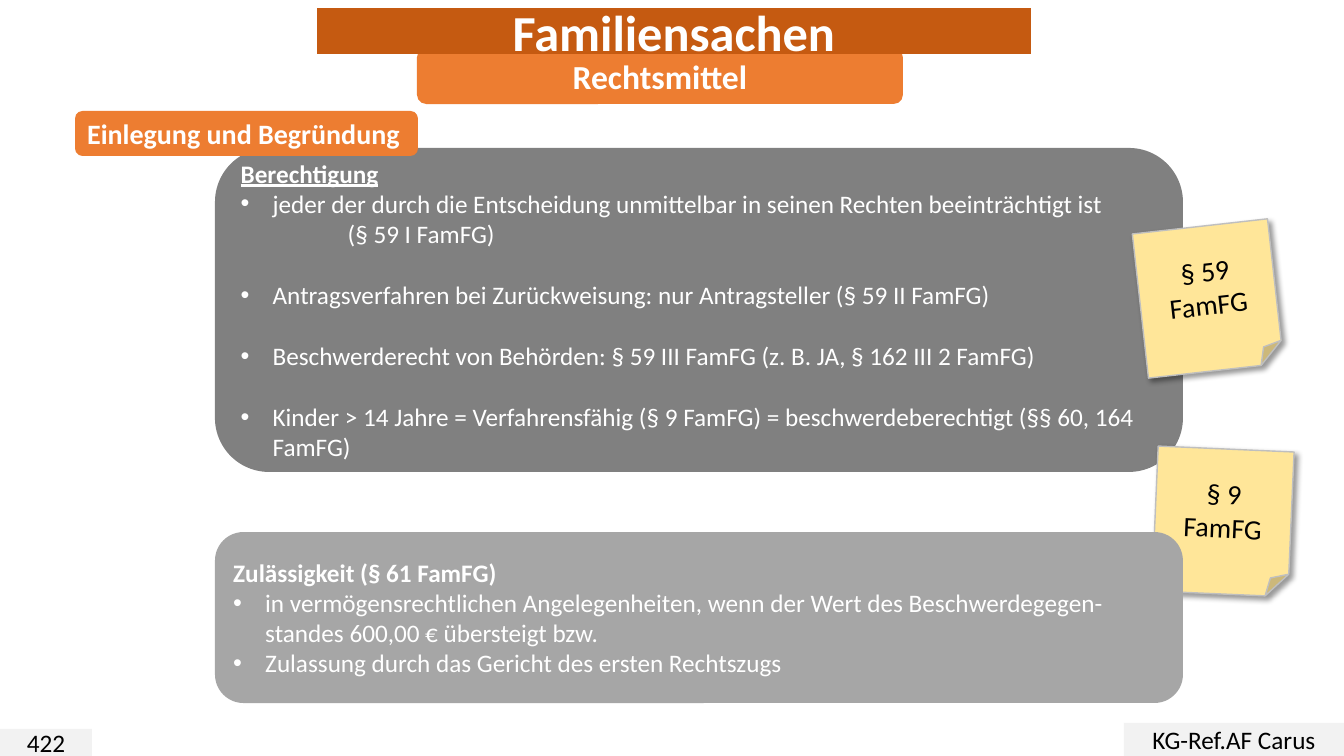
from lxml import etree
from pptx import Presentation
from pptx.dml.color import RGBColor
from pptx.enum.shapes import MSO_SHAPE
from pptx.enum.text import MSO_ANCHOR, MSO_AUTO_SIZE, PP_ALIGN
from pptx.oxml import parse_xml
from pptx.oxml.ns import nsdecls, qn
from pptx.util import Pt

RECTANGLE = MSO_SHAPE.RECTANGLE
ROUNDED = MSO_SHAPE.ROUNDED_RECTANGLE
NOTE = MSO_SHAPE.FOLDED_CORNER
LEFT, CENTER = PP_ALIGN.LEFT, PP_ALIGN.CENTER

EMU_PER_PX = 914400 / 100.8
FONT = "Calibri"
WHITE, BLACK = "FFFFFF", "000000"
ORANGE, DARK_ORANGE = "ED7D31", "C55A11"
DARK_GRAY, MID_GRAY, LIGHT_GRAY = "808080", "A6A6A6", "F2F2F2"
NOTE_YELLOW, NOTE_EDGE = "FFE699", "BFBFBF"
BULLET_INDENT = 32
LINE_GAP = 22


def px(length):
    return round(length * EMU_PER_PX)


def color(hex_string):
    return RGBColor.from_string(hex_string)


def add_bullet(paragraph):
    properties = paragraph._p.get_or_add_pPr()
    properties.set("marL", str(px(BULLET_INDENT)))
    properties.set("indent", str(-px(BULLET_INDENT)))
    etree.SubElement(properties, qn("a:buFont")).set("typeface", "Arial")
    etree.SubElement(properties, qn("a:buChar")).set("char", "•")


def write(paragraph, text, size=18, ink=WHITE, bold=False, underline=False,
          align=LEFT, gap=0, bullet=False, margin=0):
    paragraph.alignment = align
    paragraph.line_spacing = 1.0
    paragraph.space_before = Pt(gap)
    if bullet:
        add_bullet(paragraph)
    elif margin:
        paragraph._p.get_or_add_pPr().set("marL", str(px(margin)))
    run = paragraph.add_run()
    run.text = text
    run.font.name = FONT
    run.font.size = Pt(size)
    run.font.bold = bold
    run.font.underline = underline
    run.font.color.rgb = color(ink)


def fill_text(shape, lines, **common):
    """Write (text, format) pairs as paragraphs, centred vertically."""
    frame = shape.text_frame
    frame.word_wrap = True
    frame.auto_size = MSO_AUTO_SIZE.NONE
    frame.vertical_anchor = MSO_ANCHOR.MIDDLE
    for index, (text, own) in enumerate(lines):
        paragraph = frame.add_paragraph() if index else frame.paragraphs[0]
        write(paragraph, text, **{**common, **own})


def paint(shape, fill):
    shape.fill.solid()
    shape.fill.fore_color.rgb = color(fill)
    shape.line.fill.background()


def add_box(slide, kind, box, fill, lines, **common):
    shape = slide.shapes.add_shape(kind, *map(px, box))
    shape.shadow.inherit = False
    paint(shape, fill)
    fill_text(shape, lines, **common)
    return shape


def add_label(slide, kind, box, fill, text, **text_format):
    return add_box(slide, kind, box, fill, [(text, text_format)])


def add_note(slide, left, top, rotation, *texts):
    note = add_box(slide, NOTE, (left, top, 136, 145), NOTE_YELLOW,
                   [(text, {}) for text in texts],
                   size=20, ink=BLACK, align=CENTER)
    note.rotation = rotation
    note.line.color.rgb = color(NOTE_EDGE)
    note.line.width = Pt(1)
    effects = note._element.spPr.find(qn("a:effectLst"))
    effects.append(parse_xml(
        f'<a:outerShdw {nsdecls("a")} blurRad="{Pt(4)}" dist="{Pt(3)}" '
        'dir="2700000" algn="tl" rotWithShape="0"><a:srgbClr val="000000">'
        '<a:alpha val="40000"/></a:srgbClr></a:outerShdw>'))


def place_title(slide, box, text):
    title = slide.shapes.title
    title.left, title.top, title.width, title.height = map(px, box)
    title._element.spPr.append(parse_xml(
        f'<a:prstGeom {nsdecls("a")} prst="roundRect"><a:avLst/></a:prstGeom>'))
    paint(title, DARK_ORANGE)
    fill_text(title, [(text, {"size": 36, "bold": True, "align": CENTER})])
    return title


def main():
    presentation = Presentation()
    presentation.slide_width, presentation.slide_height = px(1344), px(756)
    slide = presentation.slides.add_slide(presentation.slide_layouts[5])

    bullet = {"bullet": True}
    spaced_bullet = {"bullet": True, "gap": LINE_GAP}
    add_box(slide, ROUNDED, (215, 148, 968, 324), DARK_GRAY, [
        ("Berechtigung", {"bold": True, "underline": True}),
        ("jeder der durch die Entscheidung unmittelbar in seinen Rechten "
         "beeinträchtigt ist", bullet),
        ("(§ 59 I FamFG)", {"margin": 107}),
        ("Antragsverfahren bei Zurückweisung: nur Antragsteller "
         "(§ 59 II FamFG)", spaced_bullet),
        ("Beschwerderecht von Behörden: § 59 III FamFG "
         "(z. B. JA, § 162 III 2 FamFG)", spaced_bullet),
        ("Kinder > 14 Jahre = Verfahrensfähig (§ 9 FamFG) = "
         "beschwerdeberechtigt (§§ 60, 164 FamFG)", spaced_bullet),
    ])

    subtitle = add_label(slide, ROUNDED, (417, 48, 486, 56), ORANGE,
                         "Rechtsmittel", size=24, bold=True, align=CENTER)
    title = place_title(slide, (317, 8, 714, 46), "Familiensachen")
    subtitle._element.addnext(title._element)

    add_label(slide, RECTANGLE, (0, 729, 92, 27), LIGHT_GRAY, "422",
              ink=BLACK, align=CENTER)
    add_label(slide, RECTANGLE, (1124, 723, 220, 33), LIGHT_GRAY,
              "KG-Ref.AF Carus", ink=BLACK, align=CENTER)
    add_label(slide, ROUNDED, (75, 111, 343, 45), ORANGE,
              "Einlegung und Begründung", size=20, bold=True)

    add_note(slide, 1140, 226, 353.6, "§ 59 FamFG")
    add_note(slide, 1155, 449, 2.5, "§ 9", "FamFG")

    add_box(slide, ROUNDED, (215, 532, 968, 171), MID_GRAY, [
        ("Zulässigkeit (§ 61 FamFG)", {"bold": True}),
        ("in vermögensrechtlichen Angelegenheiten, wenn der Wert des "
         "Beschwerdegegen-standes 600,00 € übersteigt bzw.", bullet),
        ("Zulassung durch das Gericht des ersten Rechtszugs", bullet),
    ])
    presentation.save("out.pptx")


if __name__ == "__main__":
    main()
